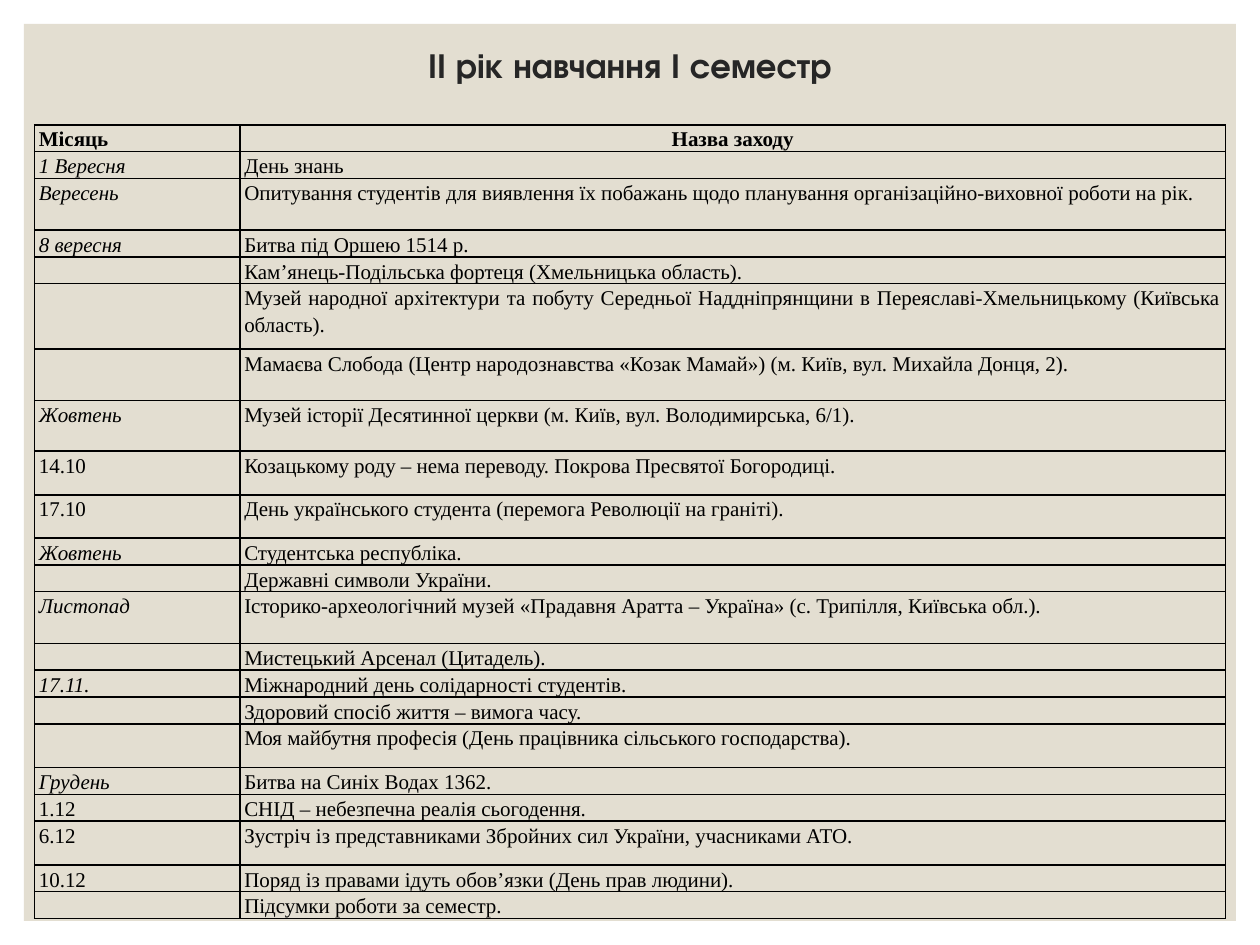
from lxml import etree
from pptx import Presentation
from pptx.dml.color import RGBColor
from pptx.enum.shapes import MSO_SHAPE
from pptx.enum.text import MSO_ANCHOR, MSO_AUTO_SIZE, PP_ALIGN
from pptx.oxml.ns import qn
from pptx.util import Pt

RECTANGLE = MSO_SHAPE.RECTANGLE
MIDDLE = MSO_ANCHOR.MIDDLE
NO_AUTOFIT = MSO_AUTO_SIZE.NONE
CENTER, JUSTIFY = PP_ALIGN.CENTER, PP_ALIGN.JUSTIFY
COLORS = {"page": "FFFFFF", "panel": "E3DED1", "title": "262626", "ink": "000000"}
TITLE_FONT, TABLE_FONT = "TeX Gyre Adventor", "Times New Roman"
TABLE_SIZE = 12

EVENTS = [
    ("Місяць", "Назва заходу", 14.4),
    ("1 Вересня", "День знань", 14.4),
    ("Вересень", "Опитування студентів для виявлення їх побажань щодо планування організаційно-виховної роботи на рік.", 29.5),
    ("8 вересня", "Битва під Оршею 1514 р.", 14.4),
    ("", "Кам’янець-Подільська фортеця (Хмельницька область).", 14.4),
    ("", "Музей народної архітектури та побуту Середньої Наддніпрянщини в Переяславі-Хмельницькому (Київська область).", 37.4),
    ("", "Мамаєва Слобода (Центр народознавства «Козак Мамай») (м. Київ, вул. Михайла Донця, 2).", 29.5),
    ("Жовтень", "Музей історії Десятинної церкви (м. Київ, вул. Володимирська, 6/1).", 28.8),
    ("14.10", "Козацькому роду – нема переводу. Покрова Пресвятої Богородиці.", 25),
    ("17.10", "День українського студента (перемога Революції на граніті).", 24.7),
    ("Жовтень", "Студентська республіка.", 14.4),
    ("", "Державні символи України.", 14.4),
    ("Листопад", "Історико-археологічний музей «Прадавня Аратта – Україна» (с. Трипілля, Київська обл.).", 29.5),
    ("", "Мистецький Арсенал (Цитадель).", 14.4),
    ("17.11.", "Міжнародний день солідарності студентів.", 14.4),
    ("", "Здоровий спосіб життя – вимога часу.", 14.4),
    ("", "Моя майбутня професія (День працівника сільського господарства).", 25),
    ("Грудень", "Битва на Синіх Водах 1362.", 14.4),
    ("1.12", "СНІД – небезпечна реалія сьогодення.", 14.4),
    ("6.12", "Зустріч із представниками Збройних сил України, учасниками АТО.", 25),
    ("10.12", "Поряд із правами ідуть обов’язки (День прав людини).", 14.4),
    ("", "Підсумки роботи за семестр.", 14.4),
]


def add_text(para, text, font, size, color, bold=False, italic=False):
    span = para.add_run()
    span.text = text
    span.font.name = font
    span.font.size = Pt(size)
    span.font.bold = bold
    span.font.italic = italic
    span.font.color.rgb = RGBColor.from_string(COLORS[color])


def add_borders(cell, width, color):
    properties = cell._tc.get_or_add_tcPr()
    for position, side in enumerate(("a:lnL", "a:lnR", "a:lnT", "a:lnB")):
        line = etree.Element(qn(side), w=str(Pt(width)))
        fill = etree.SubElement(line, qn("a:solidFill"))
        etree.SubElement(fill, qn("a:srgbClr"), val=COLORS[color])
        properties.insert(position, line)


deck = Presentation()
deck.slide_width, deck.slide_height = Pt(720), Pt(540)
page = deck.slides.add_slide(deck.slide_layouts[5])
page.background.fill.solid()
page.background.fill.fore_color.rgb = RGBColor.from_string(COLORS["page"])

panel = page.shapes.add_shape(RECTANGLE, Pt(13.7), Pt(13.7), Pt(692.6), Pt(512.6))
panel.shadow.inherit = False
panel.fill.solid()
panel.fill.fore_color.rgb = RGBColor.from_string(COLORS["panel"])
panel.line.fill.background()

title = page.shapes.title
title.element.addprevious(panel.element)
title.left, title.top, title.width, title.height = Pt(57.6), Pt(17.3), Pt(604.8), Pt(42.5)
title.text_frame.word_wrap = True
title.text_frame.auto_size = NO_AUTOFIT
title.text_frame.vertical_anchor = MIDDLE
para = title.text_frame.paragraphs[0]
para.alignment = CENTER
para.line_spacing = 0.9
add_text(para, "ІІ рік навчання І семестр", TITLE_FONT, 20, "title", bold=True)

total_height = sum(height for month, event, height in EVENTS)
frame = page.shapes.add_table(len(EVENTS), 2, Pt(19.8), Pt(71.3), Pt(680.4), Pt(total_height))
table = frame.table
table.first_row = False
table.horz_banding = False
table.columns[0].width, table.columns[1].width = Pt(117.4), Pt(563)

for row, (month, event, height) in enumerate(EVENTS):
    table.rows[row].height = Pt(height)
    for column, text in enumerate((month, event)):
        cell = table.cell(row, column)
        cell.margin_left = cell.margin_right = Pt(2.4)
        cell.margin_top = cell.margin_bottom = 0
        cell.fill.background()
        add_borders(cell, 1, "ink")
        header = row == 0
        para = cell.text_frame.paragraphs[0]
        para.alignment = CENTER if header and column == 1 else JUSTIFY
        para.line_spacing = 1.15
        if text:
            italic = column == 0 and not header and not text[-1].isdigit()
            add_text(para, text, TABLE_FONT, TABLE_SIZE, "ink", header, italic)
        else:
            etree.SubElement(para._p, qn("a:endParaRPr"), sz=str(TABLE_SIZE * 100))

deck.save("out.pptx")
